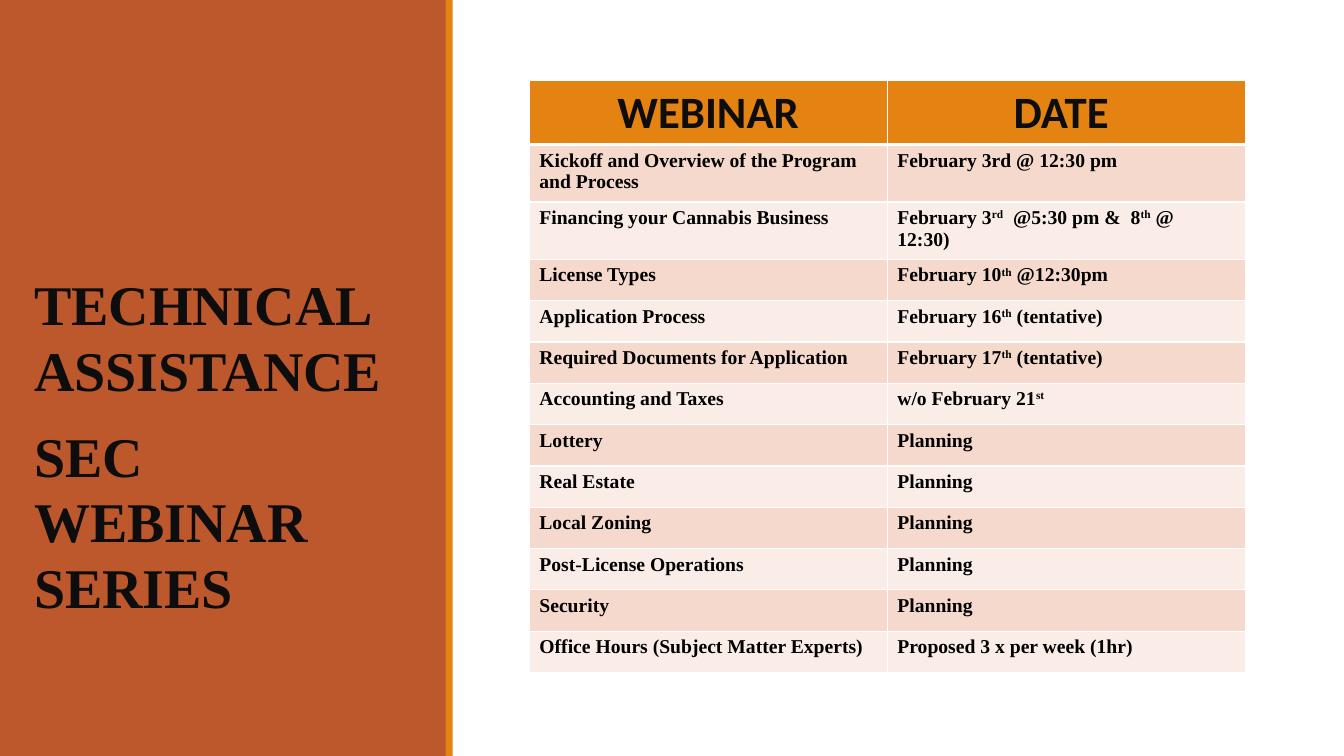
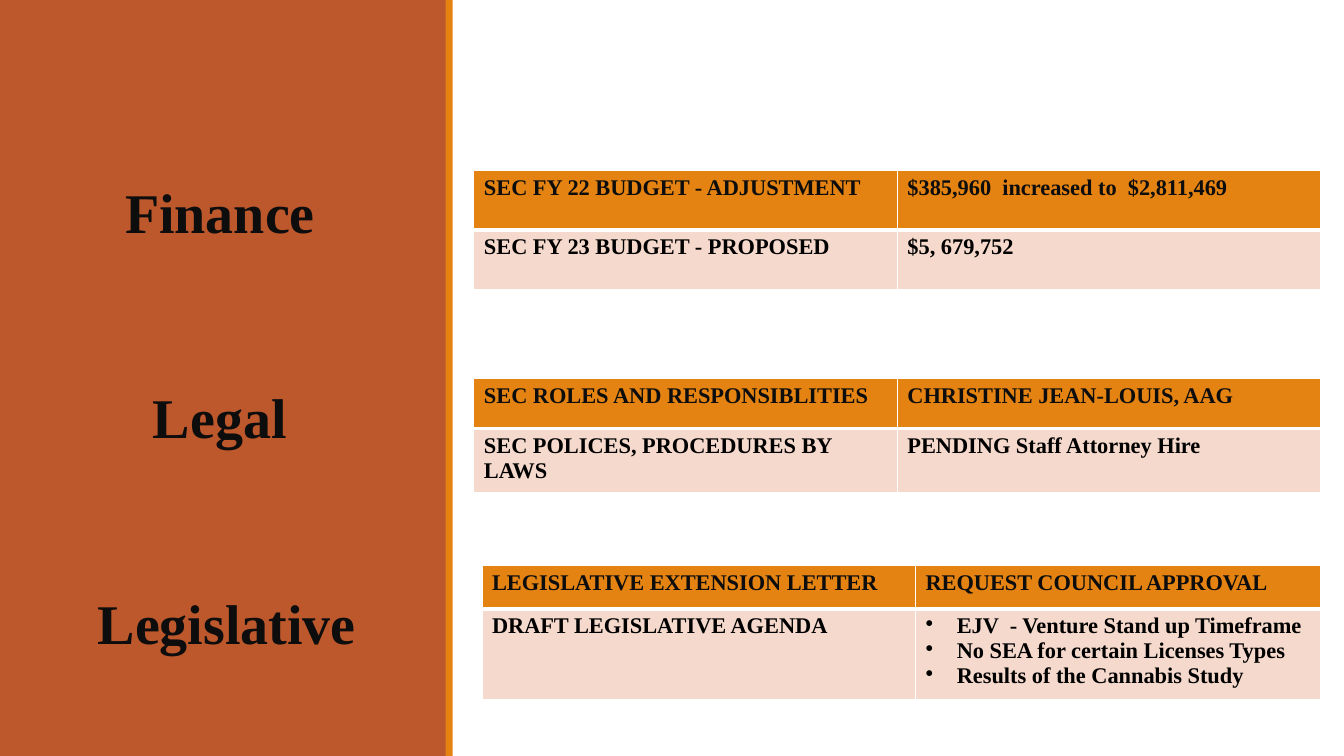
from lxml.etree import SubElement
from pptx import Presentation
from pptx.dml.color import RGBColor
from pptx.enum.shapes import MSO_SHAPE as Preset
from pptx.enum.text import PP_ALIGN as Align
from pptx.oxml.ns import qn
from pptx.util import Inches, Pt

SERIF, SANS = "Times New Roman", "Calibri"
RUST, ORANGE, INK, BLACK, WHITE = "BD582C", "E48312", "0D0D0D", "000000", "FFFFFF"
BANDS = ("F5D9CC", "FAEDE7")


def color(value):
    return RGBColor.from_string(value)


class Deck:
    """Holds the shared style and the current slide."""

    def __init__(self):
        self.deck = Presentation()
        self.deck.slide_width = Inches(13.33)
        self.deck.slide_height = Inches(7.5)
        self.page = None

    def new_page(self):
        self.page = self.deck.slides.add_slide(self.deck.slide_layouts[6])
        self.band(0, 4.43, RUST)
        self.band(4.42, 0.07, ORANGE)

    def band(self, left, width, fill):
        shape = self.page.shapes.add_shape(
            Preset.RECTANGLE, Inches(left), 0, Inches(width), self.deck.slide_height)
        shape.shadow.inherit = False
        shape.fill.solid()
        shape.fill.fore_color.rgb = color(fill)
        shape.line.fill.background()

    def style(self, para, size, ink, font=SERIF, align=Align.LEFT):
        para.alignment = align
        para.font.name = font
        para.font.size = Pt(size)
        para.font.bold = True
        para.font.color.rgb = color(ink)

    def side_title(self, left, top, width, height, lines, gap, align=Align.LEFT):
        box = self.page.shapes.add_textbox(
            Inches(left), Inches(top), Inches(width), Inches(height))
        frame = box.text_frame
        frame.word_wrap = True
        frame.margin_top = frame.margin_bottom = 0
        for index, line in enumerate(lines):
            para = frame.add_paragraph() if index else frame.paragraphs[0]
            para.text = line
            para.line_spacing = 0.98
            if index < len(lines) - 1:
                para.space_after = Pt(gap)
            self.style(para, 40, INK, align=align)

    def table(self, left, top, widths, heights, rows, size=16, header=None):
        header = header or {"size": size}
        table = self.page.shapes.add_table(
            len(rows), len(widths), Inches(left), Inches(top),
            Inches(sum(widths)), Inches(sum(heights))).table
        table.first_row = table.horz_banding = False
        for column, width in zip(table.columns, widths):
            column.width = Inches(width)
        for number, (row, height, texts) in enumerate(zip(table.rows, heights, rows)):
            row.height = Inches(height)
            for cell, text in zip(row.cells, texts):
                self.borders(cell, number)
                cell.fill.solid()
                cell.fill.fore_color.rgb = color(BANDS[(number - 1) % 2] if number else ORANGE)
                look = {"size": size, "ink": BLACK} if number else {"ink": INK, **header}
                self.cell_text(cell.text_frame, text, look)

    def borders(self, cell, number):
        properties = cell._tc.get_or_add_tcPr()
        widths = {"L": 1, "R": 1, "T": 3 if number == 1 else 1, "B": 1 if number else 3}
        for side, width in widths.items():
            line = SubElement(properties, qn(f"a:ln{side}"), w=str(Pt(width)))
            SubElement(SubElement(line, qn("a:solidFill")), qn("a:srgbClr"), val=WHITE)

    def cell_text(self, frame, text, look):
        bulleted = isinstance(text, list)
        for index, line in enumerate(text if bulleted else [text]):
            para = frame.add_paragraph() if index else frame.paragraphs[0]
            self.style(para, **look)
            for part, words in enumerate(line.split("^")):
                if words:
                    span = para.add_run()
                    span.text = words
                    if part % 2:
                        span._r.get_or_add_rPr().set("baseline", "30000")
            if bulleted:
                self.bullet(para)

    def bullet(self, para):
        properties = para._p.get_or_add_pPr()
        properties.set("marL", str(Inches(0.31)))
        properties.set("indent", str(-Inches(0.31)))
        mark = SubElement(properties, qn("a:buChar"), char="•")
        properties.find(qn("a:defRPr")).addprevious(mark)


WEBINARS = [
    ("WEBINAR", "DATE "),
    ("Kickoff and Overview of the Program and Process", "February 3rd @ 12:30 pm"),
    ("Financing your Cannabis Business", "February 3^rd^  @5:30 pm &  8^th^ @  12:30)"),
    ("License Types", "February 10^th^ @12:30pm"),
    ("Application Process", "February 16^th^ (tentative)"),
    ("Required Documents for Application", "February 17^th^ (tentative)"),
    ("Accounting and Taxes", "w/o February 21^st^"),
    ("Lottery", "Planning"),
    ("Real Estate", "Planning"),
    ("Local Zoning", "Planning"),
    ("Post-License Operations", "Planning"),
    ("Security", "Planning"),
    ("Office Hours (Subject Matter Experts)", "Proposed 3 x per week (1hr)"),
]
FINANCE = [
    ("SEC FY 22 BUDGET - ADJUSTMENT", "$385,960  increased to  $2,811,469"),
    ("SEC FY 23 BUDGET - PROPOSED", "$5, 679,752"),
]
LEGAL = [
    ("SEC ROLES AND RESPONSIBLITIES", "CHRISTINE JEAN-LOUIS, AAG"),
    ("SEC POLICES, PROCEDURES BY LAWS", "PENDING Staff Attorney Hire"),
]
LEGISLATIVE = [
    ("LEGISLATIVE EXTENSION LETTER", "REQUEST COUNCIL APPROVAL"),
    ("DRAFT LEGISLATIVE AGENDA", [
        "EJV  - Venture Stand up Timeframe",
        "No SEA for certain Licenses Types",
        "Results of the Cannabis Study",
    ]),
]


def main():
    deck = Deck()

    deck.new_page()
    deck.side_title(0.24, 2.71, 3.76, 3.2,
                    ["TECHNICAL ASSISTANCE", "SEC WEBINAR SERIES"], gap=14)
    deck.table(5.25, 0.8, [3.55] * 2, [0.63] + [0.57] * 2 + [0.41] * 10, WEBINARS, size=14,
               header={"size": 32, "font": SANS, "align": Align.CENTER})

    deck.new_page()
    deck.side_title(0.5, 1.79, 3.5, 4.6, ["Finance ", "Legal ", "Legislative"],
                    gap=100, align=Align.CENTER)
    deck.table(4.7, 1.69, [4.2] * 2, [0.59] * 2, FINANCE)
    deck.table(4.7, 3.75, [4.2] * 2, [0.5] * 2, LEGAL)
    deck.table(4.78, 5.61, [4.3, 4.02], [0.43] * 2, LEGISLATIVE)

    deck.deck.save("out.pptx")


if __name__ == "__main__":
    main()
